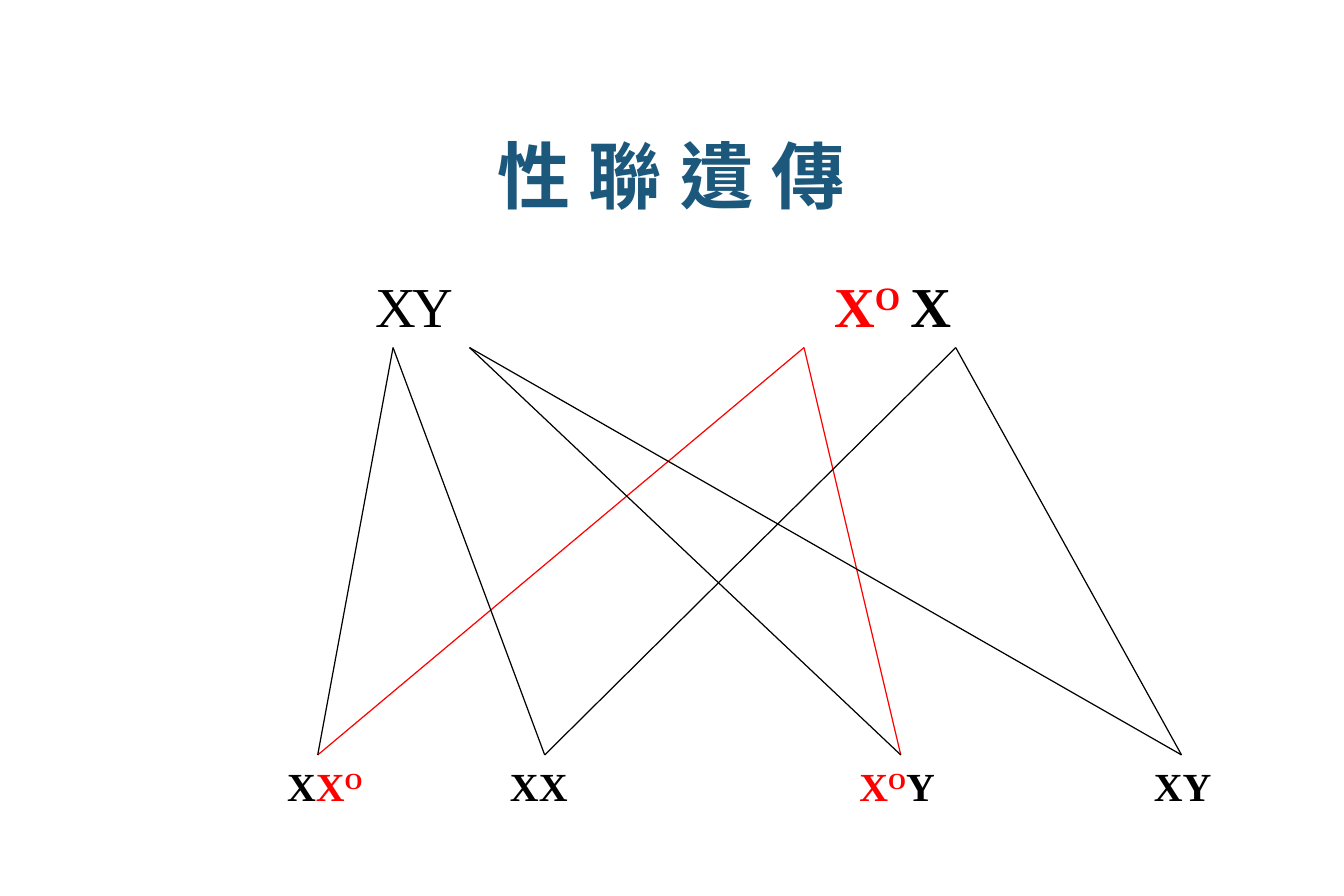
from pptx import Presentation
from pptx.dml.color import RGBColor
from pptx.enum.shapes import MSO_CONNECTOR
from pptx.enum.text import MSO_ANCHOR, PP_ALIGN
from pptx.oxml.ns import qn
from pptx.util import Pt
from lxml.etree import SubElement

theme = {
    "font": "Times New Roman",
    "blue": RGBColor(0x1B, 0x58, 0x7C),
    "black": RGBColor(0, 0, 0),
    "red": RGBColor(0xFF, 0, 0),
    "title": 44,
    "parent": 34,
    "child": 24,
    "line": 0.75,
}

deck = Presentation()
deck.slide_width, deck.slide_height = Pt(810), Pt(540)
slide = deck.slides.add_slide(deck.slide_layouts[6])


def label(area, parts, size, bold=True, drop=0):
    """Add a centred text box; parts are (text, colour, superscript)."""
    box = slide.shapes.add_textbox(*[Pt(v) for v in area])
    frame = box.text_frame
    frame.word_wrap = True
    frame.margin_top = Pt(3.6 + drop)
    para = frame.paragraphs[0]
    para.alignment = PP_ALIGN.CENTER
    for text, tone, raised in parts:
        run = para.add_run()
        run.text = text
        run.font.name = theme["font"]
        run.font.size = Pt(theme[size])
        run.font.bold = bold
        run.font.color.rgb = theme[tone]
        if raised:
            run.font._element.set("baseline", "30000")
    return frame


# Allele parts
plain = ("X", "black", False)
male = ("Y", "black", False)
gene = [("X", "red", False), ("O", "red", True)]

# Title
title = label((60.5, 77.8, 688.3, 54), [("性 聯 遺 傳", "blue", False)], "title")
title.vertical_anchor = MSO_ANCHOR.MIDDLE
props = title.paragraphs[0].runs[0].font._element
props.set("lang", "zh-TW")
props.set("spc", "50")

# Parents
for left, width, parts, bold in [
    (506.9, 108, [plain], True),
    (206.6, 108, [male], False),
    (184.3, 108, [plain], False),
    (436.3, 172.8, gene, True),
]:
    label((left, 157, width, 48.2), parts, "parent", bold, drop=3)

# Children
for left, width, parts in [
    (120.2, 151.2, [plain, *gene]),
    (249.1, 151.2, [plain, plain]),
    (465.1, 151.2, [*gene, male]),
    (615.6, 194.4, [plain, male]),
]:
    label((left, 452.9, width, 36.7), parts, "child", drop=2.5)

# Lines of descent: each parent allele reaches two children
top, base = 209.5, 455
kids = [191.5, 328.3, 542.9, 712.1]
for start, ends, tone in [
    (484.6, (0, 2), "red"),
    (236.9, (0, 1), "black"),
    (283, (2, 3), "black"),
    (576, (1, 3), "black"),
]:
    for end in ends:
        line = slide.shapes.add_connector(
            MSO_CONNECTOR.STRAIGHT, Pt(start), Pt(top), Pt(kids[end]), Pt(base))
        line.line.color.rgb = theme[tone]
        line.line.width = Pt(theme["line"])
        SubElement(line._element.spPr, qn("a:effectLst"))

deck.save("out.pptx")
